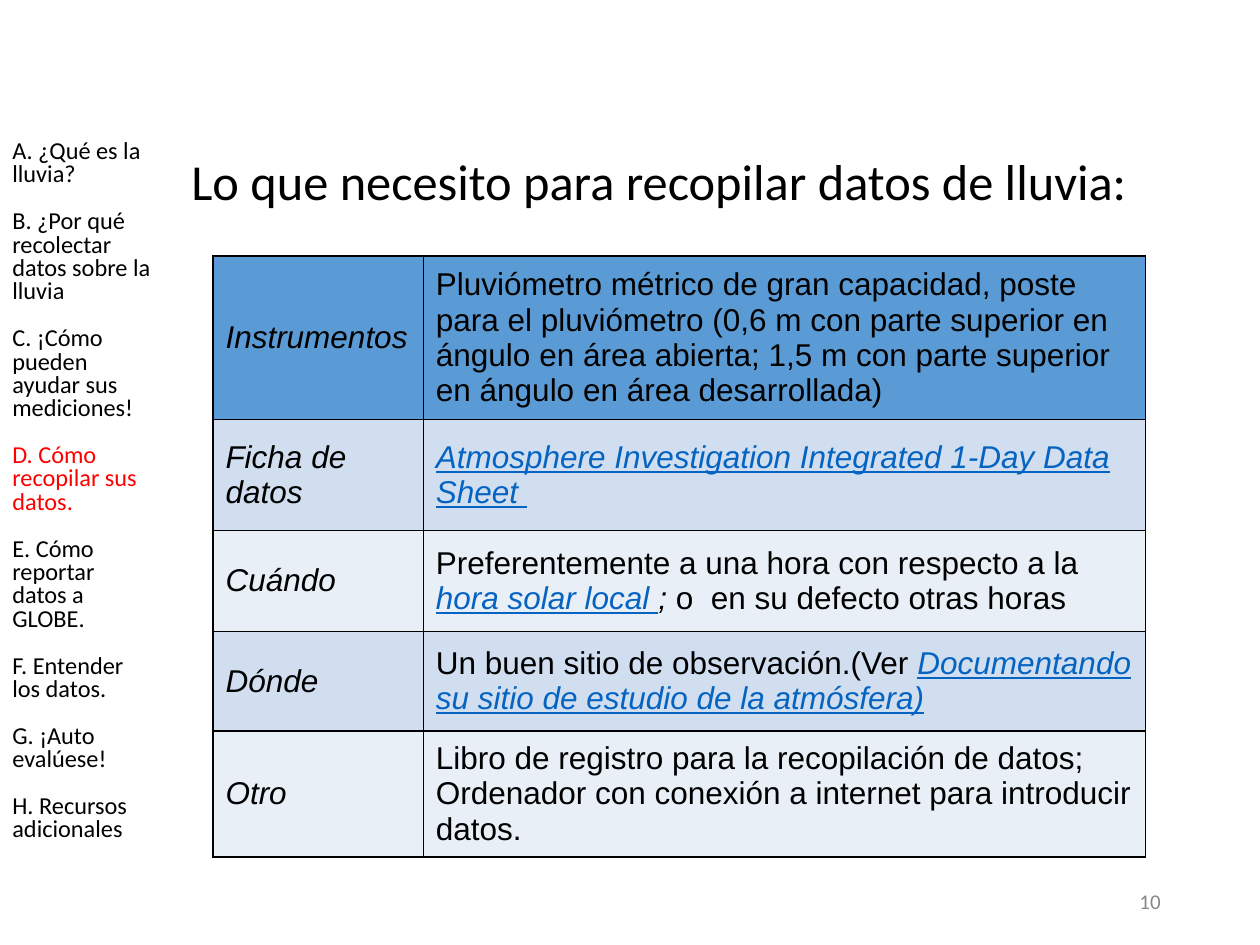
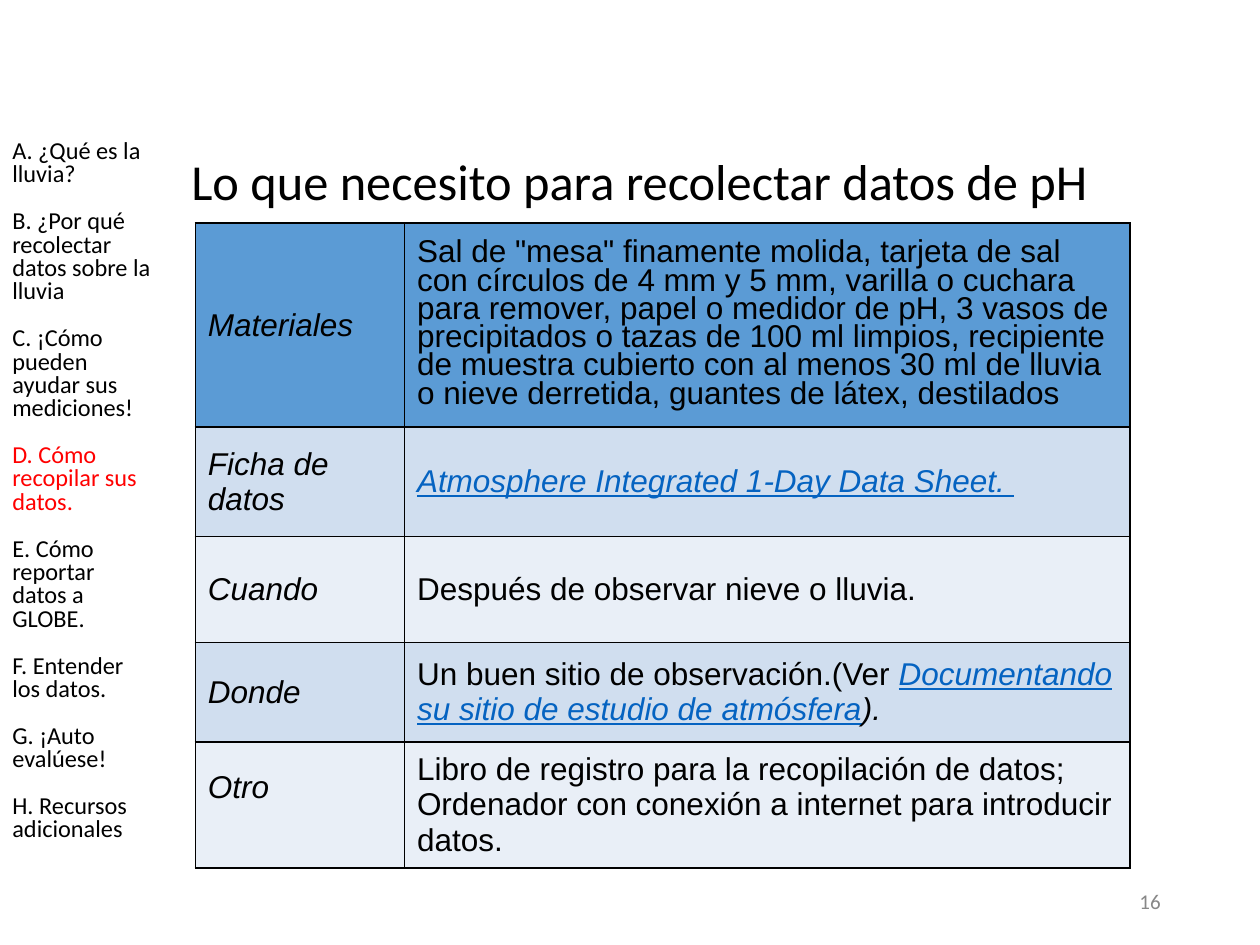
"""Build two slides that list what is needed to collect rain and pH data."""
from dataclasses import dataclass

import lxml.etree
import pptx
import pptx.dml.color
import pptx.enum.text
import pptx.oxml.ns
import pptx.util

Inches = pptx.util.Inches
Pt = pptx.util.Pt
Anchor = pptx.enum.text.MSO_ANCHOR
Align = pptx.enum.text.PP_ALIGN


@dataclass(frozen=True)
class Theme:
    heading_font: str = "Calibri"
    table_font: str = "Arial"
    text: str = "000000"
    active: str = "FF0000"
    link: str = "0563C1"
    muted: str = "888888"
    header_fill: str = "5B9BD5"
    band_fills: tuple = ("D0DEEF", "E9EFF7")
    title_size: float = 28.8
    menu_size: float = 13.9
    table_size: float = 18
    number_size: float = 12
    border_width: float = 1


THEME = Theme()
MENU = (
    "A. ¿Qué es la lluvia?",
    "B. ¿Por qué recolectar datos sobre la lluvia",
    "C. ¡Cómo pueden ayudar sus mediciones!",
    "D. Cómo recopilar sus datos.",
    "E. Cómo reportar datos a GLOBE.",
    "F. Entender los datos.",
    "G. ¡Auto evalúese!",
    "H. Recursos adicionales",
)
ACTIVE_ITEM = 3
PLAIN, ITALIC, LINK = "plain", "italic", "link"
OTHER_NEEDS = [("Libro de registro para la recopilación de datos; Ordenador con "
                "conexión a internet para introducir datos.", PLAIN)]
RAIN_ROWS = (
    ("Instrumentos", [("Pluviómetro métrico de gran capacidad, poste para el pluviómetro "
                       "(0,6 m con parte superior en ángulo en área abierta; 1,5 m con parte "
                       "superior en ángulo en área desarrollada)", PLAIN)]),
    ("Ficha de datos", [("Atmosphere Investigation Integrated 1-Day Data Sheet ", LINK)]),
    ("Cuándo", [("Preferentemente a una hora con respecto a la ", PLAIN),
                ("hora solar local ", LINK), ("; ", ITALIC),
                ("o  en su defecto otras horas", PLAIN)]),
    ("Dónde", [("Un buen sitio de observación.(Ver ", PLAIN),
               ("Documentando su sitio de estudio de la atmósfera)", LINK)]),
    ("Otro", OTHER_NEEDS),
)
PH_ROWS = (
    ("Materiales", [("Sal de \"mesa\" finamente molida, tarjeta de sal con círculos de 4 mm y "
                     "5 mm, varilla o cuchara para remover, papel o medidor de pH, 3 vasos de "
                     "precipitados o tazas de 100 ml limpios, recipiente de muestra cubierto con "
                     "al menos 30 ml de lluvia o nieve derretida, guantes de látex, destilados",
                     PLAIN)]),
    ("Ficha de datos", [("Atmosphere Integrated 1-Day Data Sheet. ", LINK)]),
    ("Cuando", [("Después de observar nieve o lluvia.", PLAIN)]),
    ("Donde", [("Un buen sitio de observación.(Ver ", PLAIN),
               ("Documentando su sitio de estudio de atmósfera", LINK), (").", ITALIC)]),
    ("Otro", OTHER_NEEDS),
)


def rgb(color):
    return pptx.dml.color.RGBColor.from_string(color)


def set_font(font, name, size, color):
    font.name = name
    font.size = Pt(size)
    font.color.rgb = rgb(color)


def add_text_box(page, left, top, width, height, anchor=Anchor.MIDDLE):
    box = page.shapes.add_textbox(Inches(left), Inches(top), Inches(width), Inches(height))
    frame = box.text_frame
    frame.word_wrap = True
    frame.vertical_anchor = anchor
    return frame


def add_title(page, text):
    para = add_text_box(page, 1.42, 1.02, 7.94, 0.88).paragraphs[0]
    para.text = text
    para.line_spacing = 0.9
    set_font(para.font, THEME.heading_font, THEME.title_size, THEME.text)


def add_menu(page):
    frame = add_text_box(page, 0, 1.07, 1.3, 6.2, Anchor.TOP)
    for index, item in enumerate(MENU):
        para = frame.add_paragraph() if index else frame.paragraphs[0]
        para.text = item
        para.line_spacing = 0.8
        if index:
            para.space_before = Pt(13.5)
        color = THEME.active if index == ACTIVE_ITEM else THEME.text
        set_font(para.font, THEME.heading_font, THEME.menu_size, color)


def add_page_number(page, number):
    para = add_text_box(page, 7.06, 6.95, 2.25, 0.4).paragraphs[0]
    para.text = str(number)
    para.alignment = Align.RIGHT
    set_font(para.font, THEME.heading_font, THEME.number_size, THEME.muted)


def add_borders(cell):
    properties = cell._tc.get_or_add_tcPr()
    qn = pptx.oxml.ns.qn
    for position, side in enumerate(("a:lnL", "a:lnR", "a:lnT", "a:lnB")):
        line = lxml.etree.Element(qn(side), w=str(Pt(THEME.border_width)))
        fill = lxml.etree.SubElement(line, qn("a:solidFill"))
        lxml.etree.SubElement(fill, qn("a:srgbClr"), val=THEME.text)
        properties.insert(position, line)


def fill_cell(cell, spans, fill):
    cell.fill.solid()
    cell.fill.fore_color.rgb = rgb(fill)
    cell.vertical_anchor = Anchor.MIDDLE
    add_borders(cell)
    para = cell.text_frame.paragraphs[0]
    set_font(para.font, THEME.table_font, THEME.table_size, THEME.text)
    for text, style in spans:
        span = para.add_run()
        span.text = text
        span.font.italic = style != PLAIN
        if style == LINK:
            span.font.underline = True
            span.font.color.rgb = rgb(THEME.link)


def add_needs_table(page, left, top, widths, heights, rows):
    frame = page.shapes.add_table(len(rows), len(widths), Inches(left), Inches(top),
                                  Inches(sum(widths)), Inches(sum(heights)))
    table = frame.table
    table.first_row = False
    table.horz_banding = False
    for column, width in zip(table.columns, widths):
        column.width = Inches(width)
    for index, (label, spans) in enumerate(rows):
        table.rows[index].height = Inches(heights[index])
        fill = THEME.band_fills[(index - 1) % 2] if index else THEME.header_fill
        fill_cell(table.cell(index, 0), [(label, ITALIC)], fill)
        fill_cell(table.cell(index, 1), spans, fill)
    return table


def add_page(deck, title, number):
    page = deck.slides.add_slide(deck.slide_layouts[6])
    add_title(page, title)
    add_menu(page)
    add_page_number(page, number)
    return page


def main():
    deck = pptx.Presentation()
    deck.slide_width = Inches(10)
    deck.slide_height = Inches(7.5)

    rain_page = add_page(deck, "Lo que necesito para recopilar datos de lluvia:", 10)
    add_needs_table(rain_page, 1.69, 2.03, (1.67, 5.73),
                    (1.24, 0.88, 0.8, 0.79, 0.94), RAIN_ROWS)

    ph_page = add_page(deck, "Lo que necesito para recolectar datos de pH", 16)
    ph_table = add_needs_table(ph_page, 1.55, 1.77, (1.66, 5.76),
                               (1.62, 0.87, 0.84, 0.79, 0.94), PH_ROWS)
    ph_table.cell(0, 1).text_frame.paragraphs[0].line_spacing = 0.8
    ph_table.cell(4, 0).margin_bottom = Inches(0.33)

    deck.save("out.pptx")


if __name__ == "__main__":
    main()
